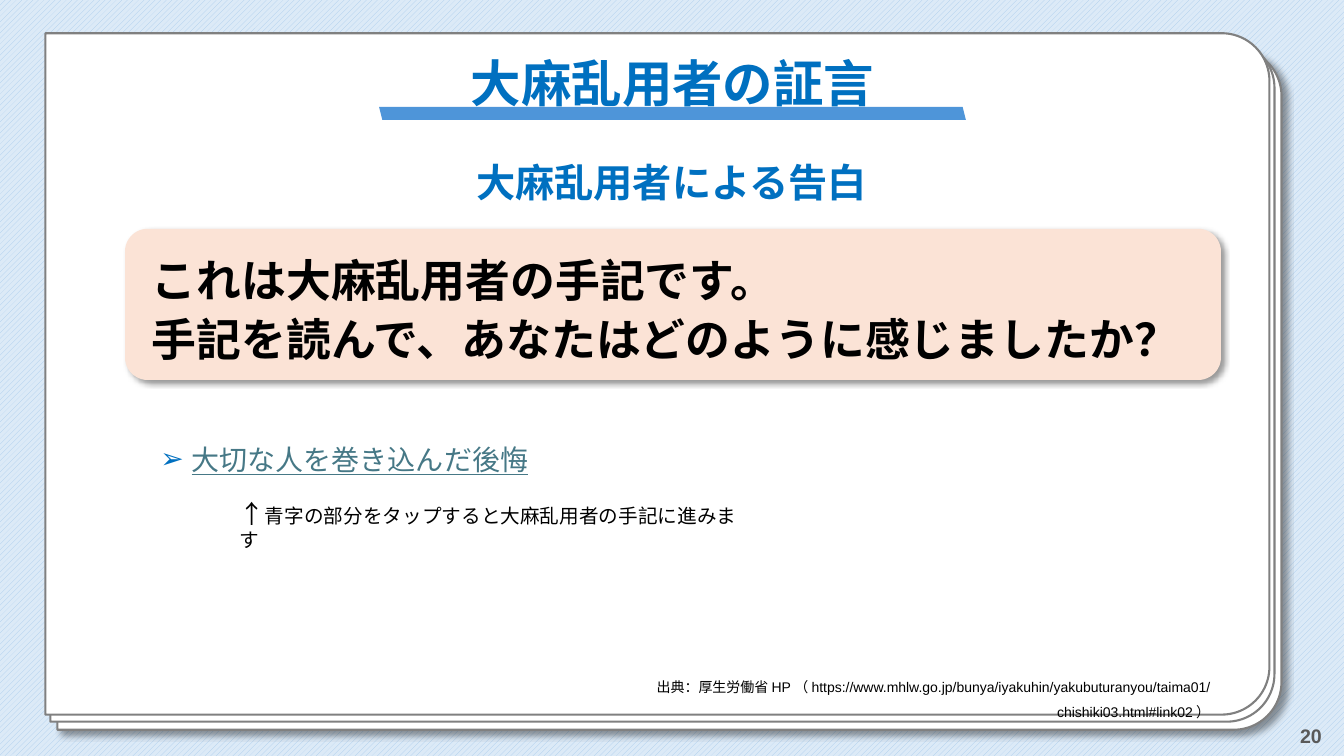
from lxml import etree
from pptx import Presentation
from pptx.dml.color import RGBColor
from pptx.enum.dml import MSO_PATTERN
from pptx.enum.shapes import MSO_SHAPE
from pptx.enum.text import MSO_ANCHOR, MSO_AUTO_SIZE, PP_ALIGN
from pptx.oxml.ns import qn
from pptx.util import Pt

PX = 9144
BLUE = RGBColor(0x00, 0x70, 0xC0)
BAR = RGBColor(0x4E, 0x95, 0xD9)
PEACH = RGBColor(0xFB, 0xE3, 0xD6)
WHITE = RGBColor(0xFF, 0xFF, 0xFF)
BLACK = RGBColor(0x00, 0x00, 0x00)
GRAY = RGBColor(0x80, 0x80, 0x80)
DARK = RGBColor(0x59, 0x59, 0x59)
TEAL = RGBColor(0x46, 0x78, 0x86)
STRIPE = RGBColor(0xA6, 0xCA, 0xEC)
PALE = RGBColor(0xDC, 0xEA, 0xF7)
DIAG = MSO_PATTERN.WIDE_UPWARD_DIAGONAL
PAGE = MSO_SHAPE.ROUND_2_SAME_RECTANGLE
ROUND = MSO_SHAPE.ROUNDED_RECTANGLE
SLANT = MSO_SHAPE.PARALLELOGRAM
TOP, MIDDLE, BOTTOM = MSO_ANCHOR.TOP, MSO_ANCHOR.MIDDLE, MSO_ANCHOR.BOTTOM
LEFT, CENTER, RIGHT = PP_ALIGN.LEFT, PP_ALIGN.CENTER, PP_ALIGN.RIGHT
FIXED, GROW = MSO_AUTO_SIZE.NONE, MSO_AUTO_SIZE.SHAPE_TO_FIT_TEXT
SANS, ASIAN = "Arial", "Noto Sans CJK JP"
INSET = (10, 5, 10, 5)


def add(parent, tag, **attrs):
    node = etree.SubElement(parent, qn(tag))
    for key, value in attrs.items():
        node.set(key, str(value))
    return node


def apply(target, values):
    for key, value in values.items():
        setattr(target, key, value)


class Deck:
    def __init__(self, width, height):
        self.file = Presentation()
        apply(self.file, {"slide_width": width * PX, "slide_height": height * PX})
        self.slide = self.file.slides.add_slide(self.file.slide_layouts[1])
        self.base = {"name": SANS, "color": BLACK, "bold": False}

    def back(self, kind, fore, ground):
        fill = self.slide.background.fill
        fill.patterned()
        fill.pattern = kind
        fill.fore_color.rgb = fore
        fill.back_color.rgb = ground

    def shape(self, kind, box, fill, line=None, adjust=(), shadow=0):
        item = self.slide.shapes.add_shape(kind, *(n * PX for n in box))
        item.shadow.inherit = False
        item.fill.solid()
        item.fill.fore_color.rgb = fill
        if line is None:
            item.line.fill.background()
        else:
            item.line.color.rgb = line
            item.line.width = Pt(1.5)
        for place, value in enumerate(adjust):
            item.adjustments[place] = value
        if shadow:
            effect = item.element.spPr.find(qn("a:effectLst"))
            outer = add(effect, "a:outerShdw", blurRad=Pt(4), dist=Pt(shadow),
                        dir=45 * 60000, algn="tl", rotWithShape=0)
            add(add(outer, "a:srgbClr", val=BLACK), "a:alpha", val=40000)
        return item

    def label(self, item, lines, align=LEFT, anchor=TOP, inset=INSET,
              fit=FIXED, space=1.0, bullet=None, **font):
        frame = item.text_frame
        sides = ("margin_left", "margin_top", "margin_right", "margin_bottom")
        apply(frame, dict(zip(sides, (n * PX for n in inset))))
        apply(frame, {"word_wrap": True, "auto_size": fit, "vertical_anchor": anchor})
        for place, parts in enumerate(lines):
            para = frame.add_paragraph() if place else frame.paragraphs[0]
            if bullet:
                self.bullet(para, bullet)
            apply(para, {"alignment": align, "line_spacing": space,
                         "space_before": Pt(0)})
            for text, size in parts:
                run = para.add_run()
                run.text = text
                style = {**self.base, **font, "size": Pt(size)}
                run.font.color.rgb = style.pop("color")
                apply(run.font, style)
                add(run._r.get_or_add_rPr(), "a:ea", typeface=ASIAN)

    def bullet(self, para, mark):
        props = para._p.get_or_add_pPr()
        props.set("marL", str(67 * PX))
        props.set("indent", str(-31 * PX))
        add(add(props, "a:buClr"), "a:srgbClr", val=BLUE)
        add(props, "a:buFont", typeface=SANS)
        add(props, "a:buChar", char=mark)

    def text(self, box, lines, **style):
        item = self.slide.shapes.add_textbox(*(n * PX for n in box))
        self.label(item, lines, **style)

    def holder(self, index, box, lines, **style):
        item = self.slide.placeholders[index]
        names = ("left", "top", "width", "height")
        apply(item, dict(zip(names, (n * PX for n in box))))
        item.element.getparent().append(item.element)
        self.label(item, lines, **style)


def main():
    deck = Deck(1333, 750)
    deck.back(DIAG, STRIPE, PALE)
    for left, top, shadow in ((326, -221, 5), (319, -229, 0), (314, -236, 0)):
        page = deck.shape(PAGE, (left, top, 676, 1214), WHITE, GRAY, (0.07, 0), shadow)
        page.rotation = 90
    deck.text((1021, 710, 300, 40), [[("20", 14)]],
              align=RIGHT, anchor=MIDDLE, color=DARK, bold=True)
    deck.holder(0, (376, 33, 582, 85), [[("大麻乱用者の証言", 36)]],
                align=CENTER, anchor=BOTTOM, space=0.9, color=BLUE, bold=True)
    panel = deck.shape(ROUND, (124, 227, 1087, 150), PEACH, adjust=(0.15,), shadow=3)
    deck.label(panel, [[("これは大麻乱用者の手記です。", 32)],
                       [("手記を読んで、あなたはどのように感じましたか？", 32)]],
               anchor=MIDDLE, inset=(20, 12, 10, 8), space=1.1, name=ASIAN, bold=True)
    deck.text((124, 153, 1086, 56), [[("大麻乱用者による告白", 28)]],
              align=CENTER, inset=(8, 4, 10, 5), fit=GROW, color=BLUE, bold=True)
    source = ("出典：厚生労働省HP（https://www.mhlw.go.jp/bunya/iyakuhin/"
              "yakubuturanyou/taima01/chishiki03.html#link02）")
    deck.text((494, 660, 716, 33), [[(source, 10)]], align=RIGHT, fit=GROW, space=1.5)
    deck.text((228, 484, 524, 50),
              [[("↑", 18), ("青字の部分をタップすると大麻乱用者の手記に進みます", 14)]],
              inset=(10, 10, 10, 10), fit=GROW)
    deck.holder(1, (113, 415, 436, 58), [[("大切な人を巻き込んだ後悔", 20)]],
                fit=GROW, space=1.57, bullet="➢", name=ASIAN, color=TEAL, underline=True)
    bar = deck.shape(SLANT, (376, 106, 582, 13), BAR)
    bar.element.spPr.find(qn("a:xfrm")).set("flipH", "1")
    deck.file.save("out.pptx")


if __name__ == "__main__":
    main()
